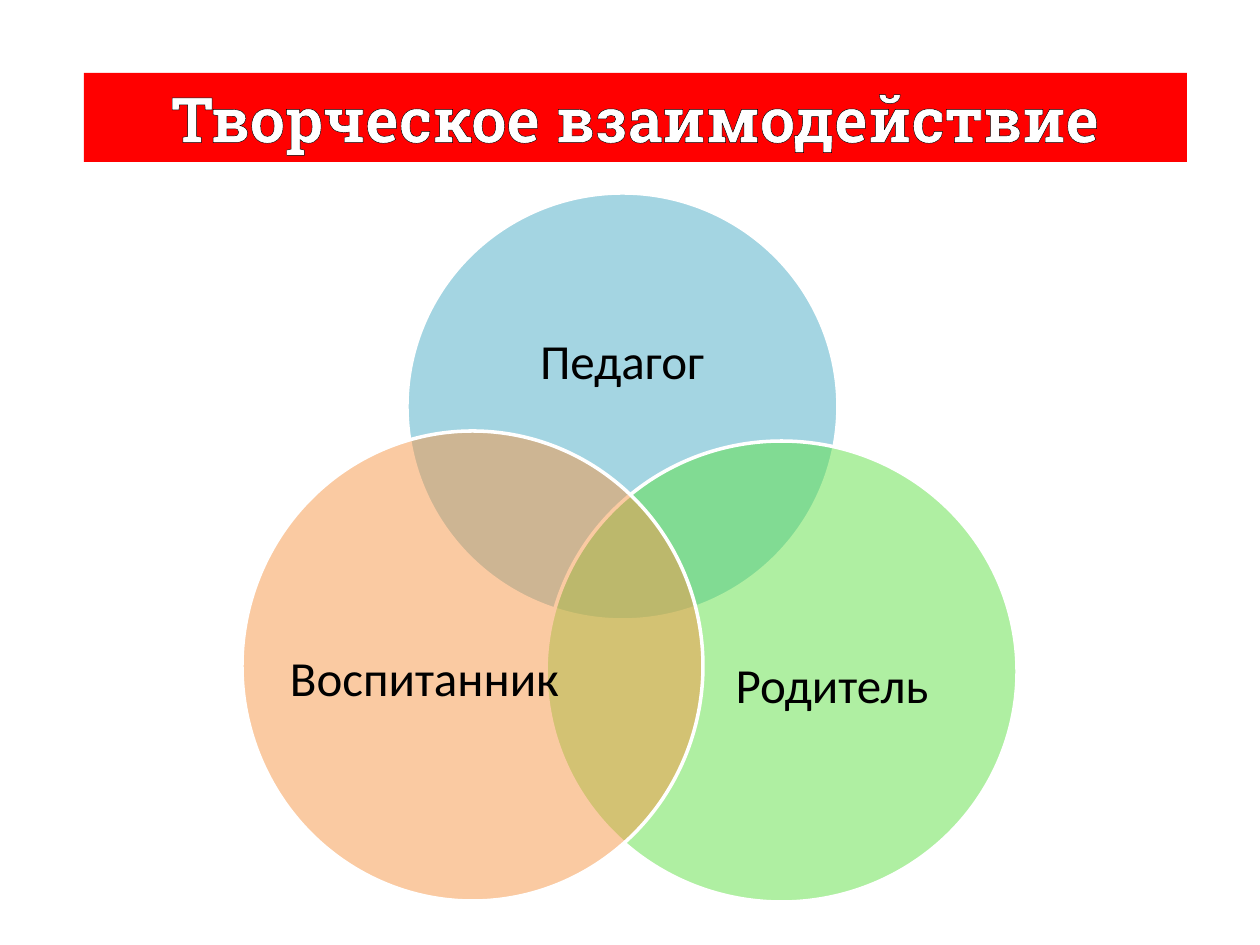
from lxml import etree
from pptx import Presentation
from pptx.dml.color import RGBColor
from pptx.enum.shapes import MSO_SHAPE
from pptx.enum.text import MSO_ANCHOR, PP_ALIGN
from pptx.oxml.ns import qn
from pptx.util import Pt

RECT, OVAL = MSO_SHAPE.RECTANGLE, MSO_SHAPE.OVAL
MIDDLE, CENTER = MSO_ANCHOR.MIDDLE, PP_ALIGN.CENTER
PX = 914400 / 126  # EMU in one px
HEX = {"red": "FF0000", "white": "FFFFFF", "black": "000000",
       "blue": "4BACC6", "green": "60E146", "orange": "F79646"}
TITLE = {"name": "Roboto Slab", "size": Pt(36), "bold": True}
LABEL = {"name": "Calibri", "size": Pt(28)}
FRAME = {"word_wrap": True, "vertical_anchor": MIDDLE}
TIGHT = {"margin_left": 0, "margin_right": 0, "margin_top": 0, "margin_bottom": 0}

# Circle (x, y, w, h), label box relative to the circle, from back to front
RINGS = [
    ("Педагог", "blue", (407, 193, 431, 427), (57, 74, 316, 193)),
    ("Родитель", "green", (546, 441, 471, 461), (145, 120, 282, 253)),
    ("Воспитанник", "orange", (242, 431, 461, 470), (44, 121, 277, 258)),
]


def emu(box):
    return [round(v * PX) for v in box]


def color(name):
    return RGBColor.from_string(HEX[name])


def apply(target, values):
    for key, value in values.items():
        setattr(target, key, value)


def add_form(slide, kind, box, fill):
    form = slide.shapes.add_shape(kind, *emu(box))
    form.shadow.inherit = False
    form.fill.solid()
    form.fill.fore_color.rgb = color(fill)
    form.line.fill.background()
    return form


def write(frame, text, font, ink, layout):
    apply(frame, layout)
    para = frame.paragraphs[0]
    para.alignment = CENTER
    run = para.add_run()
    run.text = text
    apply(run.font, font)
    run.font.color.rgb = color(ink)
    return run


def add_title(slide, box, text):
    bar = add_form(slide, RECT, box, "red")
    run = write(bar.text_frame, text, TITLE, "white", FRAME)
    # Thin black outline around the letters
    props = run.font.fill._xPr
    line = etree.Element(qn("a:ln"), w=str(Pt(0.75)))
    solid = etree.SubElement(line, qn("a:solidFill"))
    etree.SubElement(solid, qn("a:srgbClr"), val=HEX["black"])
    props.insert(0, line)


def add_ring(slide, box, inner, text, fill):
    # Half-transparent circle with a white edge
    ring = add_form(slide, OVAL, box, fill)
    tint = ring.fill._xPr.find(qn("a:solidFill"))[0]
    etree.SubElement(tint, qn("a:alpha"), val="50000")
    ring.line.color.rgb = color("white")
    ring.line.width = Pt(2)
    # Label
    x, y, w, h = inner
    note = slide.shapes.add_textbox(*emu((box[0] + x, box[1] + y, w, h)))
    write(note.text_frame, text, LABEL, "black", FRAME | TIGHT)
    note.text_frame.paragraphs[0].line_spacing = 0.9


def main():
    deck = Presentation()
    deck.slide_width, deck.slide_height = emu((1260, 945))
    slide = deck.slides.add_slide(deck.slide_layouts[6])
    add_title(slide, (84, 73, 1103, 89), "Творческое взаимодействие")
    for text, fill, box, inner in RINGS:
        add_ring(slide, box, inner, text, fill)
    deck.save("out.pptx")


if __name__ == "__main__":
    main()
